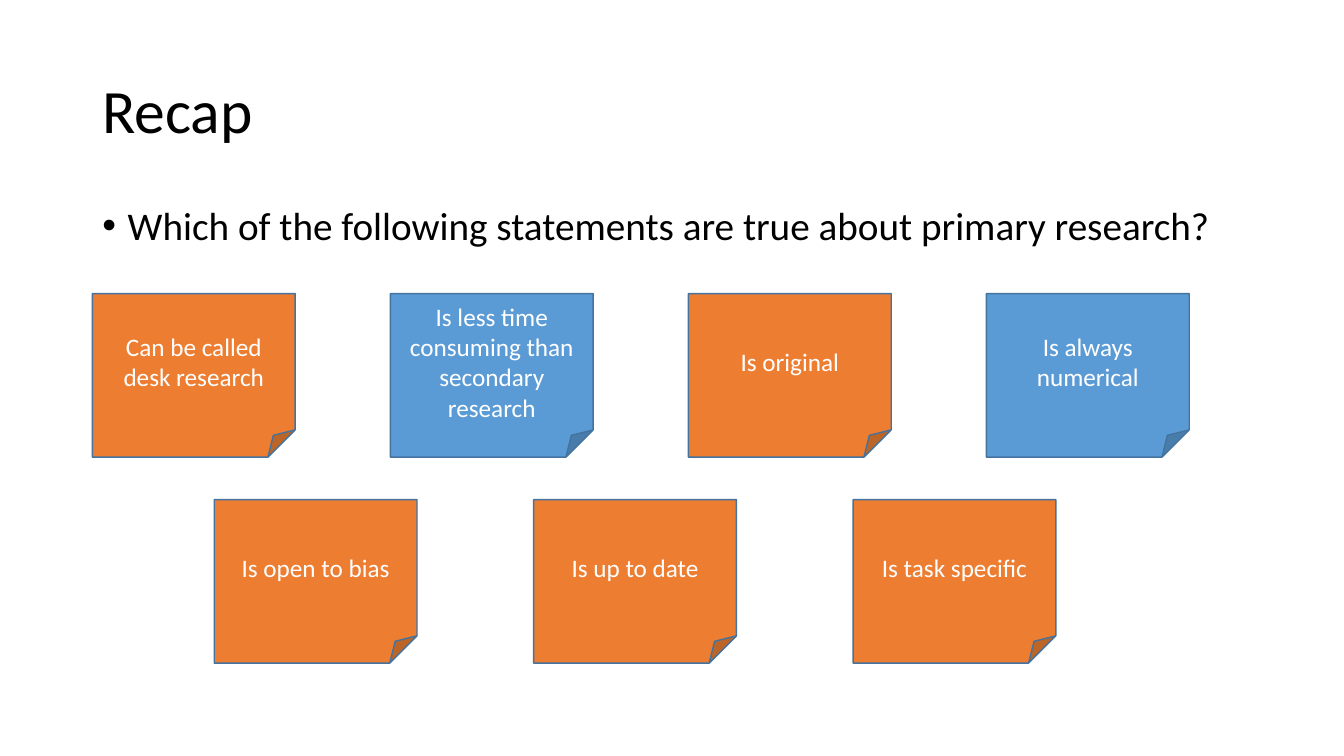
from lxml import etree
from pptx import Presentation
from pptx import util as u
from pptx.dml.color import RGBColor
from pptx.enum import shapes, text
from pptx.oxml.ns import qn

HUES = {"black": "000000", "white": "FFFFFF", "orange": "ED7D31",
        "blue": "5B9BD5", "edge": "43739E"}


def hue(name):
    return RGBColor.from_string(HUES[name])


def write(frame, words, size=18, color="black", font="Calibri", align="LEFT",
          anchor="TOP", line=None, before=None):
    frame.word_wrap = True
    frame.vertical_anchor = getattr(text.MSO_ANCHOR, anchor)
    para = frame.paragraphs[0]
    para.alignment = getattr(text.PP_ALIGN, align)
    para.line_spacing = line
    if before is not None:
        para.space_before = u.Pt(before)
    run = para.add_run()
    run.text = words
    run.font.name = font
    run.font.size = u.Pt(size)
    run.font.color.rgb = hue(color)
    return para


class Deck:
    def __init__(self):
        self.file = Presentation()
        self.file.slide_width = u.Cm(33.87)
        self.file.slide_height = u.Cm(19.05)
        self.slide = self.file.slides.add_slide(self.file.slide_layouts[6])

    def label(self, box, words, **style):
        area = self.slide.shapes.add_textbox(*map(u.Cm, box))
        return write(area.text_frame, words, line=0.9, **style)

    def bullet(self, box, words, **style):
        props = self.label(box, words, **style)._p.get_or_add_pPr()
        indent = u.Cm(0.64)
        props.set("marL", str(indent))
        props.set("indent", str(-indent))
        etree.SubElement(props, qn("a:buFont"), typeface="Arial")
        etree.SubElement(props, qn("a:buChar"), char="•")

    def note(self, box, words, fill):
        card = self.slide.shapes.add_shape(
            shapes.MSO_SHAPE.FOLDED_CORNER, *map(u.Cm, box))
        card.shadow.inherit = False
        card.fill.solid()
        card.fill.fore_color.rgb = hue(fill)
        card.line.color.rgb = hue("edge")
        card.line.width = u.Pt(1)
        write(card.text_frame, words, color="white", align="CENTER",
              anchor="MIDDLE")

    def row(self, left, top, step, notes):
        for i, (words, fill) in enumerate(notes):
            self.note((left + i * step, top, 5.11, 4.12), words, fill)


def main():
    deck = Deck()

    # Heading and question
    deck.label((2.33, 1.02, 29.21, 3.68), "Recap", size=44, anchor="MIDDLE")
    deck.bullet((2.33, 5.08, 29.21, 1.73),
                "Which of the following statements are true about "
                "primary research?", size=28, before=10)

    # Two rows of statement notes
    deck.row(2.33, 7.4, 7.51, [
        ("Can be called desk research", "orange"),
        ("Is less time consuming than secondary research", "blue"),
        ("Is original", "orange"),
        ("Is always numerical", "blue")])
    deck.row(5.4, 12.59, 8.05, [
        ("Is open to bias", "orange"),
        ("Is up to date", "orange"),
        ("Is task specific", "orange")])

    deck.file.save("out.pptx")


if __name__ == "__main__":
    main()
